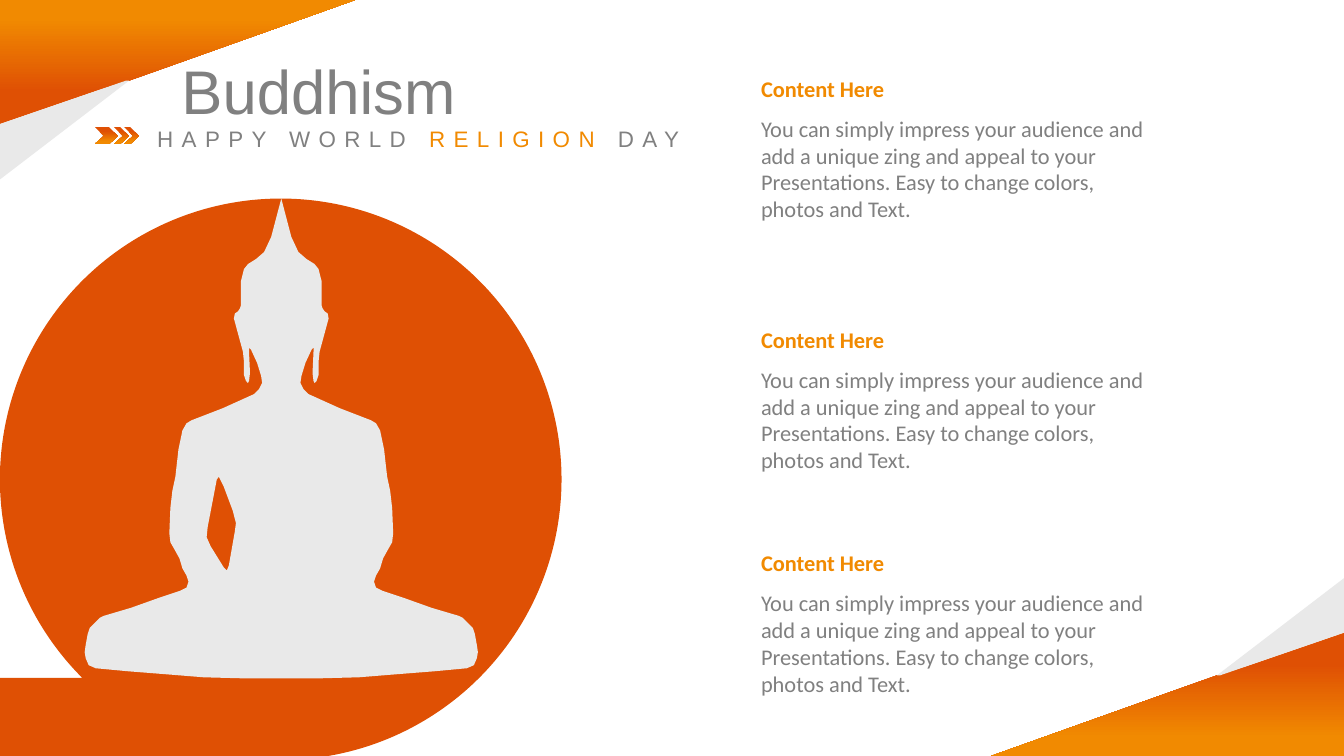
from pptx import Presentation
from pptx.dml.color import RGBColor
from pptx.enum.shapes import MSO_SHAPE as SHAPE
from pptx.enum.text import MSO_ANCHOR as ANCHOR, MSO_AUTO_SIZE as AUTO, PP_ALIGN as ALIGN
from pptx.oxml.ns import qn
from pptx.util import Inches, Pt

ORANGE, AMBER, GREY, PALE = "DF5004", "F18A01", "808080", "E9E9E9"
BODY = ("You can simply impress your audience and add a unique zing and appeal "
        "to your Presentations. Easy to change colors, photos and Text.")

# Half of the seated figure: distance from its axis, distance from its top
HALF_FIGURE = [
    (0.1, 0.38), (0.17, 0.53), (0.25, 0.6), (0.33, 0.65), (0.37, 0.7), (0.4, 0.82),
    (0.4, 1.06), (0.41, 1.09), (0.43, 1.12), (0.46, 1.14), (0.47, 1.19),
    (0.38, 1.52), (0.37, 1.62), (0.37, 1.75), (0.35, 1.81), (0.33, 1.83),
    (0.32, 1.81), (0.31, 1.73), (0.32, 1.52), (0.32, 1.48), (0.3, 1.5),
    (0.24, 1.63), (0.2, 1.76), (0.19, 1.83), (0.22, 1.89), (0.27, 1.94),
    (0.58, 2.08), (0.89, 2.2), (0.94, 2.23), (0.98, 2.3), (1.02, 2.49),
    (1.05, 2.76), (1.08, 2.9), (1.1, 3.07), (1.11, 3.32), (1.1, 3.41),
    (1.06, 3.48), (1.01, 3.57), (0.98, 3.67), (0.94, 3.74), (0.92, 3.8),
    (0.94, 3.86), (1, 3.89), (1.21, 3.96), (1.49, 4.06), (1.76, 4.14),
    (1.8, 4.16), (1.9, 4.26), (1.92, 4.32), (1.94, 4.43), (1.95, 4.5),
    (1.94, 4.56), (1.91, 4.63), (1.84, 4.66), (1.52, 4.69), (1.14, 4.72),
    (0.77, 4.75), (0.38, 4.76),
]
ARM_GAP = [
    (1.33, 2.76), (1.38, 2.86), (1.47, 3.1), (1.5, 3.22), (1.49, 3.3), (1.43, 3.64),
    (1.41, 3.69), (1.38, 3.66), (1.25, 3.45), (1.21, 3.36), (1.22, 3.26), (1.31, 2.79),
]


def rgb(value):
    return RGBColor.from_string(value)


def paint(sp, color=None):
    """Flat colour, or the orange gradient when none is given."""
    if color:
        sp.fill.solid()
        sp.fill.fore_color.rgb = rgb(color)
    else:
        sp.fill.gradient()
        sp.fill.gradient_angle = 270
        for stop, position, tone in zip(sp.fill.gradient_stops, (0.26, 0.85), (ORANGE, AMBER)):
            stop.position = position
            stop.color.rgb = rgb(tone)
    sp.line.fill.background()
    sp.shadow.inherit = False


def outline(s, left, top, contours, color=None):
    placed = [[(Inches(left + x), Inches(top + y)) for x, y in c] for c in contours]
    builder = s.shapes.build_freeform(*placed[0][0], scale=1.0)
    builder.add_line_segments(placed[0][1:], close=True)
    for contour in placed[1:]:
        builder.move_to(*contour[0])
        builder.add_line_segments(contour[1:], close=True)
    sp = builder.convert_to_shape()
    paint(sp, color)
    return sp


def write(sp, box, runs, font, size, anchor=ANCHOR.TOP, align=ALIGN.LEFT, spacing=0):
    sp.left, sp.top, sp.width, sp.height = map(Inches, box)
    tf = sp.text_frame
    tf.word_wrap = True
    tf.auto_size = AUTO.SHAPE_TO_FIT_TEXT
    tf.vertical_anchor = anchor
    p = tf.paragraphs[0]
    p.alignment = align
    for text, color, bold in runs:
        r = p.add_run()
        r.text = text
        r.font.name, r.font.size, r.font.bold = font, Pt(size), bold
        r.font.color.rgb = rgb(color)
        if spacing:
            r._r.get_or_add_rPr().set("spc", str(spacing * 100))
    return tf


def text_box(s, box, *args, **kwargs):
    return write(s.shapes.add_textbox(*map(Inches, box)), box, *args, **kwargs)


def corner(s, left, top, width, height, turned=False):
    bend, tip, side = (2.24, 0.98), (2.27, 0.98), (width, 0.55)
    band = outline(s, left, top, [[(0, height), bend, tip, side, (width, height)]])
    wedge = outline(s, left, top, [[bend, (width, 0), side, tip]], PALE)
    if turned:
        for sp in (band, wedge):
            sp.left = Inches(2 * left + width) - sp.left - sp.width
            sp.top = Inches(2 * top + height) - sp.top - sp.height
            sp.rotation = 180


def disc(s, left, top, size):
    sp = s.shapes.add_shape(SHAPE.FLOWCHART_SEQUENTIAL_ACCESS_STORAGE,
                            *map(Inches, (left, top, size, size)))
    sp._element.spPr.find(qn("a:xfrm")).set("flipH", "1")
    paint(sp, ORANGE)


def seated_figure(s, left, top, width):
    axis = width / 2
    body = [(axis, 0)] + [(axis - x, y) for x, y in HALF_FIGURE]
    body += [(axis + x, y) for x, y in reversed(HALF_FIGURE)]
    outline(s, left, top, [body, ARM_GAP], PALE)


def content_block(s, left, top, width):
    text_box(s, (left, top, width, 0.37), [("Content Here", AMBER, True)],
             "Calibri", 16, ANCHOR.MIDDLE)
    text_box(s, (left, top + 0.4, width, 1.18), [(BODY, GREY, False)], "Calibri", 16)


def heading(s, left, top):
    write(s.shapes.title, (left, top, 4.98, 0.84), [("Buddhism", GREY, False)],
          "Arial", 44, align=ALIGN.CENTER)
    words = [("HAPPY WORLD ", GREY, False), ("RELIGION", AMBER, False), (" DAY", GREY, False)]
    tf = text_box(s, (left + 0.89, top + 0.72, 5.43, 0.37), words, "Arial", 16,
                  ANCHOR.MIDDLE, spacing=6)
    tf.margin_left = 0
    # Three chevrons
    half, tall = 0.09, 0.17
    for x, wide in ((0.27, 0.23), (0.46, 0.15), (0.56, 0.15)):
        neck = wide - half
        outline(s, left + x, top + 0.79, [[(0, 0), (neck, 0), (wide, half), (neck, tall),
                                           (0, tall), (half, half)]])


def main():
    prs = Presentation()
    prs.slide_width, prs.slide_height = Inches(13.33), Inches(7.5)
    s = prs.slides.add_slide(prs.slide_layouts[5])
    # Corner ornaments
    corner(s, 0, 0, 3.52, 1.78, turned=True)
    corner(s, 9.83, 5.72, 3.52, 1.78)
    # Illustration
    disc(s, 0, 1.97, 5.57)
    seated_figure(s, 0.84, 1.97, 3.9)
    # Text
    for top in (0.69, 3.18, 5.4):
        content_block(s, 7.45, top, 4.17)
    heading(s, 0.67, 0.47)
    prs.save("out.pptx")


if __name__ == "__main__":
    main()
